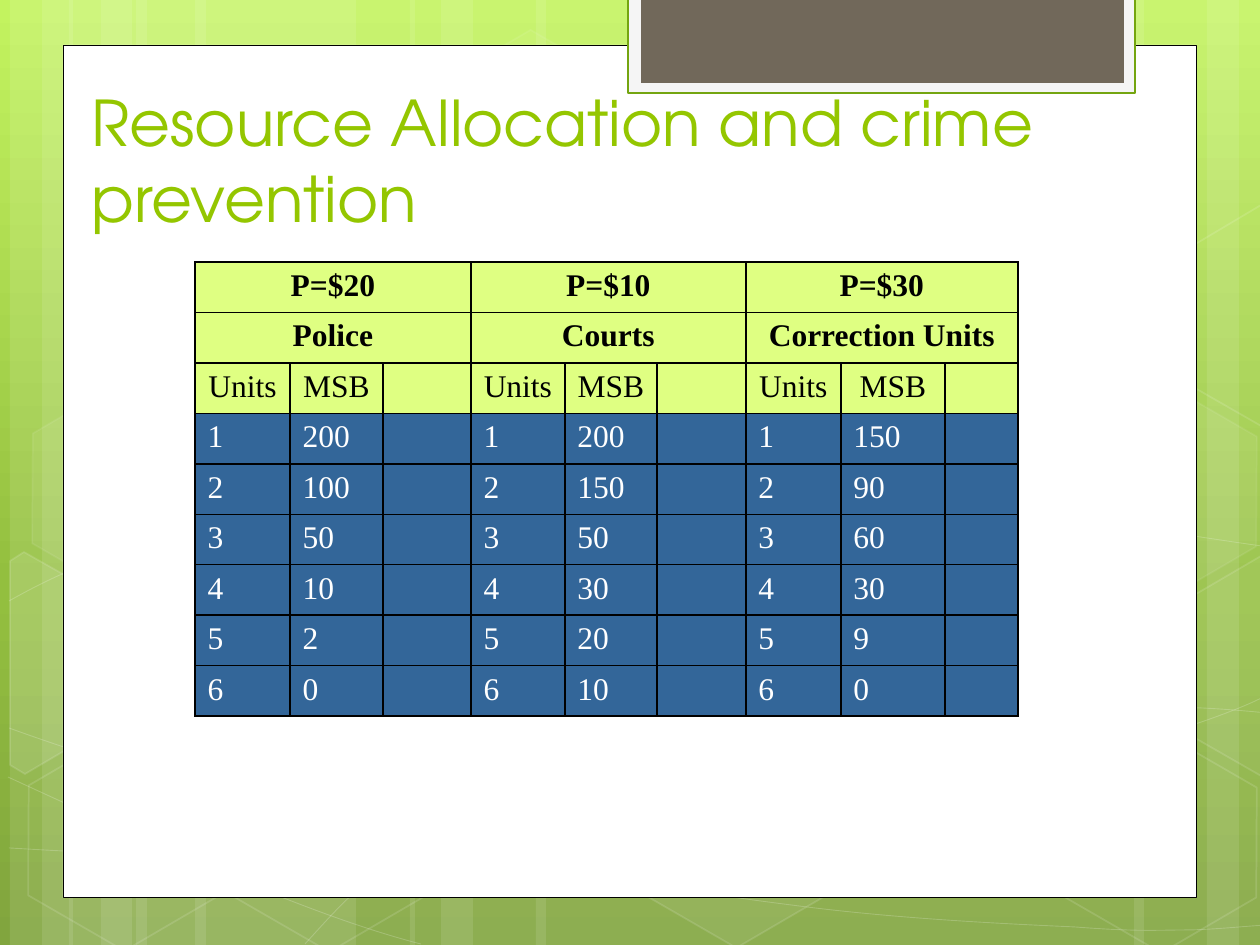
from lxml.etree import SubElement
from pptx import Presentation
from pptx.dml.color import RGBColor as RGB
from pptx.enum.shapes import MSO_SHAPE as SHAPE
from pptx.enum.text import MSO_ANCHOR as ANCHOR, PP_ALIGN as ALIGN
from pptx.oxml import parse_xml
from pptx.oxml.ns import nsdecls, qn
from pptx.util import Pt

SCALE = 914400 / 126
COLORS = {
    "white": "FFFFFF", "black": "000000", "title": "94C600",
    "tab_edge": "74A510", "tab_rim": "F5F5F5", "tab": "71685A",
    "head": "DFFF82", "body": "336699",
}
BACKGROUND = [(0, "C3F35F"), (62, "93BF3F"), (100, "81A53E")]
TITLE_FONT, TABLE_FONT = "TeX Gyre Adventor", "Times New Roman"

STRIPES = [
    (136, 220), (10, 63), (42, 105), (195, 220), (69, 63), (101, 105),
    (924, 220), (1207, 63), (1134, 105), (536, 388), (410, 63), (441, 105),
]
CURVES = [
    [(9, 848), (77, 852), (145, 856), (239, 854), (334, 853), (451, 851), (577, 838),
     (703, 825), (882, 801), (998, 777), (1113, 753), (1231, 716), (1269, 694)],
    [(9, 601), (45, 581), (82, 562), (152, 543), (224, 524), (326, 499), (437, 488),
     (549, 478), (685, 478), (824, 488), (963, 498), (1193, 537), (1269, 547)],
    [(8, 777), (160, 847), (311, 916), (421, 944)],
    [(9, 728), (48, 742), (88, 756), (161, 776), (234, 795), (344, 827), (450, 848),
     (554, 869), (687, 892), (791, 905), (896, 919), (1008, 924), (1075, 927),
     (1140, 932), (1158, 930), (1191, 930), (1223, 929), (1246, 926), (1269, 925)],
    [(305, 944), (328, 919), (350, 893), (381, 871), (411, 848), (454, 822), (489, 805),
     (524, 788), (546, 780), (592, 767), (638, 754), (722, 737), (766, 728),
     (811, 719), (818, 719), (857, 717), (896, 713), (958, 709), (1000, 708),
     (1045, 707), (1116, 708), (1116, 708), (1116, 708), (1201, 708), (1201, 708),
     (1223, 709), (1245, 711), (1256, 712), (1264, 713), (1264, 712), (1268, 713)],
]
HEXAGONS = [
    (421, 45, 4, 8), (626, 742, 6, 12), (14, 745, None, 12), (18, 393, 7, 8),
    (219, 746, None, 12), (949, 571, 10, 12), (1051, 747, None, 12), (1051, 396, 7, 8),
]
CUT_HEXAGONS = [
    ([(10, 561), (24, 552), (121, 607), (120, 718), (25, 774), (10, 765)], 10),
    ([(1167, 611), (1261, 556), (1271, 562), (1271, 772), (1263, 777), (1167, 722)], 4),
    ([(1167, 261), (1261, 205), (1273, 212), (1271, 422), (1263, 427), (1167, 372)], None),
]

COLUMNS = [95, 93, 88, 94, 92, 89, 95, 104, 73]
ROW_HEIGHT = 47
GROUPS = [
    ("P=$20", "Police", [200, 100, 50, 10, 2, 0]),
    ("P=$10", "Courts", [200, 150, 50, 30, 20, 10]),
    ("P=$30", "Correction Units", [150, 90, 60, 30, 9, 0]),
]


def px(value):
    return round(value * SCALE)


def rgb(name):
    return RGB.from_string(COLORS[name])


def set_alpha(parent, percent):
    color = parent.find(qn("a:solidFill"))[0]
    SubElement(color, qn("a:alpha"), val=str(percent * 1000))


def style(sp, fill=None, line=None, width=1, fill_alpha=None, line_alpha=None):
    sp.shadow.inherit = False
    if fill:
        sp.fill.solid()
        sp.fill.fore_color.rgb = rgb(fill)
        if fill_alpha:
            set_alpha(sp.element.spPr, fill_alpha)
    else:
        sp.fill.background()
    if line:
        sp.line.color.rgb = rgb(line)
        sp.line.width = Pt(width)
        if line_alpha:
            set_alpha(sp.element.spPr.find(qn("a:ln")), line_alpha)
    else:
        sp.line.fill.background()


def add_preset(s, kind, box, **look):
    sp = s.shapes.add_shape(kind, *map(px, box))
    style(sp, **look)
    return sp


def add_outline(s, points, close, **look):
    points = [(px(x), px(y)) for x, y in points]
    builder = s.shapes.build_freeform(*points[0])
    builder.add_line_segments(points[1:], close=close)
    sp = builder.convert_to_shape()
    style(sp, **look)
    return sp


def add_curve(s, knots, **look):
    sp = add_outline(s, knots, False, **look)
    segments = list(sp.element.iter(qn("a:lnTo")))
    outline = segments[0].getparent()
    for i in range(0, len(segments), 3):
        bezier = SubElement(outline, qn("a:cubicBezTo"))
        for segment in segments[i:i + 3]:
            bezier.append(segment[0])
            outline.remove(segment)


def add_run(p, text, font, size, color, bold=False):
    r = p.add_run()
    r.text = text
    r.font.name, r.font.size, r.font.bold = font, Pt(size), bold
    r.font.color.rgb = rgb(color)


def set_empty_font(p, font, size):
    end = SubElement(p._p, qn("a:endParaRPr"), sz=str(size * 100))
    SubElement(end, qn("a:latin"), typeface=font)


def paint_background(s):
    fill = s.background.fill
    fill.gradient()
    fill.gradient_angle = 270
    stops = next(s.element.iter(qn("a:gsLst")))
    for stop in list(stops):
        stops.remove(stop)
    for position, color in BACKGROUND:
        stop = SubElement(stops, qn("a:gs"), pos=str(position * 1000))
        SubElement(stop, qn("a:srgbClr"), val=color)


def add_decoration(s):
    for left, width in STRIPES:
        add_preset(s, SHAPE.RECTANGLE, (left, 0, width, 945), fill="white", fill_alpha=10)
    for knots in CURVES:
        add_curve(s, knots, line="white", width=0.5, line_alpha=20)
    for left, top, alpha, edge in HEXAGONS:
        sp = add_preset(s, SHAPE.HEXAGON, (left, top, 220, 191), fill=alpha and "white",
                        fill_alpha=alpha, line="white", line_alpha=edge)
        sp.adjustments[0] = 0.285
        sp.rotation = 30
    for points, alpha in CUT_HEXAGONS:
        add_outline(s, points, True, fill=alpha and "white", fill_alpha=alpha,
                    line="white", line_alpha=12)


def add_panel(s):
    add_preset(s, SHAPE.RECTANGLE, (63, 45, 1134, 853), fill="white", line="black", width=0.5)
    add_preset(s, SHAPE.RECTANGLE, (628, -3, 507, 96), fill="tab_rim", line="tab_edge", width=1.25)
    add_preset(s, SHAPE.RECTANGLE, (641, -3, 483, 86), fill="tab")


def add_title(s, text):
    tf = s.shapes.add_textbox(*map(px, (79, 73, 1103, 168))).text_frame
    tf.word_wrap = True
    tf.vertical_anchor = ANCHOR.BOTTOM
    add_run(tf.paragraphs[0], text, TITLE_FONT, 36, "title")


def set_borders(cell):
    tc_pr = cell._tc.get_or_add_tcPr()
    for i, side in enumerate(("lnL", "lnR", "lnT", "lnB")):
        tc_pr.insert(i, parse_xml(
            f'<a:{side} {nsdecls("a")} w="{Pt(1)}"><a:solidFill>'
            f'<a:srgbClr val="{COLORS["black"]}"/></a:solidFill></a:{side}>'))


def table_rows():
    rows = [[], [], []]
    for price, service, _ in GROUPS:
        rows[0] += [price, "", ""]
        rows[1] += [service, "", ""]
        rows[2] += ["Units", "MSB", ""]
    for i in range(6):
        rows.append([text for _, _, benefits in GROUPS
                     for text in (str(i + 1), str(benefits[i]), "")])
    return rows


def add_allocation_table(s):
    rows = table_rows()
    box = (195, 262, sum(COLUMNS), ROW_HEIGHT * len(rows))
    table = s.shapes.add_table(len(rows), len(COLUMNS), *map(px, box)).table
    table.first_row = table.horz_banding = False
    for column, width in zip(table.columns, COLUMNS):
        column.width = px(width)
    for i, row in enumerate(rows):
        table.rows[i].height = px(ROW_HEIGHT)
        head = i < 3
        for j, text in enumerate(row):
            cell = table.cell(i, j)
            cell.fill.solid()
            cell.fill.fore_color.rgb = rgb("head" if head else "body")
            set_borders(cell)
            p = cell.text_frame.paragraphs[0]
            if text:
                p.alignment = ALIGN.CENTER if head else ALIGN.LEFT
                add_run(p, text, TABLE_FONT, 18, "black" if head else "white", bold=i < 2)
            else:
                set_empty_font(p, TABLE_FONT, 18)
    for i in range(2):
        for j in range(0, len(COLUMNS), 3):
            table.cell(i, j).merge(table.cell(i, j + 2))


def main():
    prs = Presentation()
    prs.slide_width, prs.slide_height = px(1260), px(945)
    s = prs.slides.add_slide(prs.slide_layouts[6])
    paint_background(s)
    add_decoration(s)
    add_panel(s)
    add_title(s, "Resource Allocation and crime prevention")
    add_allocation_table(s)
    prs.save("out.pptx")


if __name__ == "__main__":
    main()
